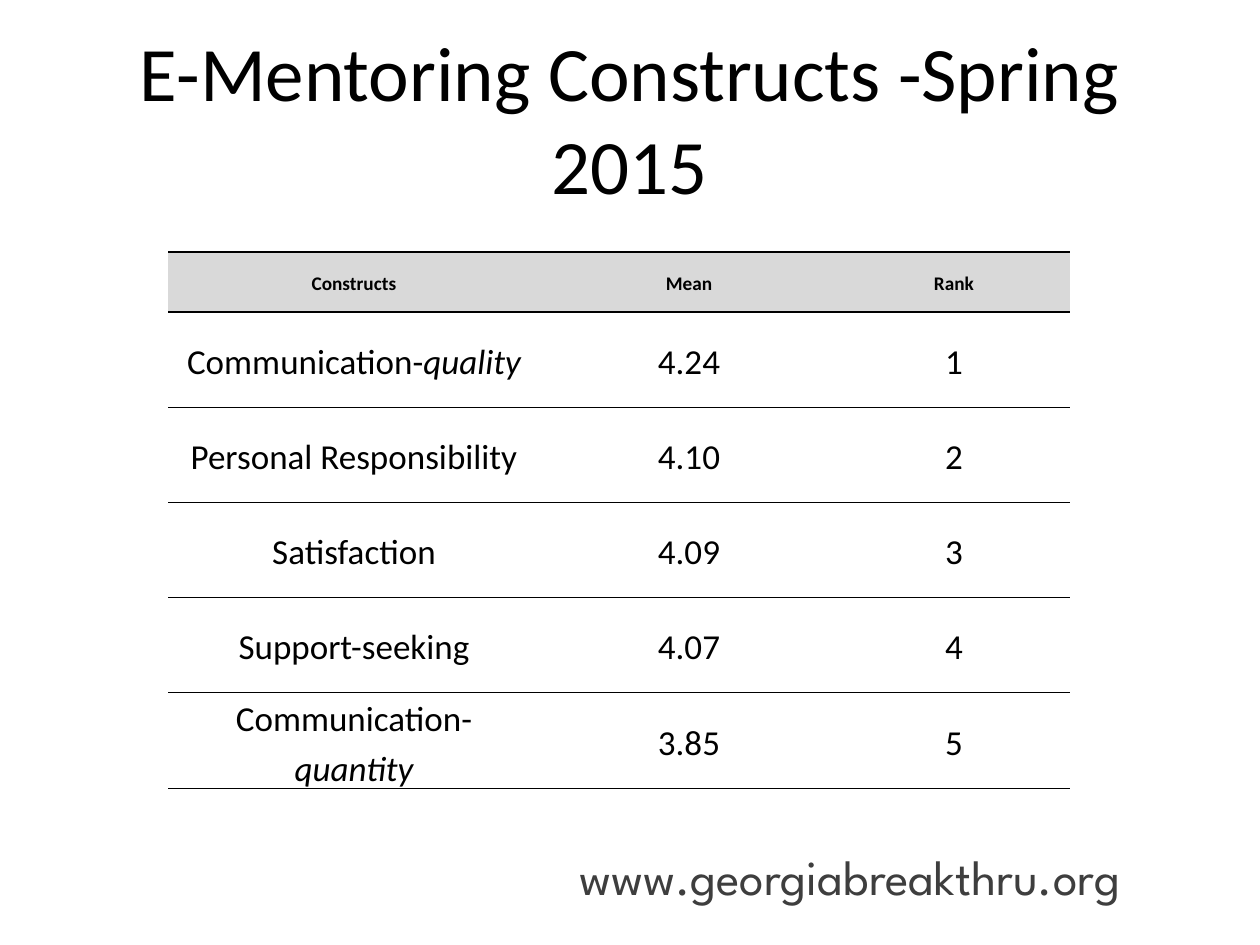
from pptx import Presentation
from pptx.dml.color import RGBColor
from pptx.enum.text import MSO_ANCHOR, PP_ALIGN
from pptx.oxml.ns import qn
from pptx.util import Emu, Pt
from lxml.etree import SubElement

SCALE = 914400 / 126  # EMU in one px
BLACK, GREY, DARK, WHITE = "000000", "D9D9D9", "3E3E3E", "FFFFFF"

COLS = [372, 298, 232]
HEAD = ["Constructs", "Mean", "Rank"]
# Plain part, italic part, mean
ROWS = [
    ("Communication-", "quality", "4.24"),
    ("Personal Responsibility", "", "4.10"),
    ("Satisfaction", "", "4.09"),
    ("Support-seeking", "", "4.07"),
    ("Communication-", "quantity", "3.85"),
]


def px(n):
    return Emu(round(n * SCALE))


def color(code):
    return RGBColor.from_string(code)


def write(para, text, size=20, font="Calibri", ink=BLACK, bold=False, italic=False):
    run = para.add_run()
    run.text = text
    run.font.size = Pt(size)
    run.font.name = font
    run.font.color.rgb = color(ink)
    run.font.bold = bold
    run.font.italic = italic


def add_text(slide, text, box, align=PP_ALIGN.LEFT, anchor=MSO_ANCHOR.TOP, **style):
    frame = slide.shapes.add_textbox(*map(px, box)).text_frame
    frame.word_wrap = True
    frame.vertical_anchor = anchor
    para = frame.paragraphs[0]
    para.alignment = align
    write(para, text, **style)


def add_edge(cell, side, width):
    """Draw one cell border; a width of 0 hides it."""
    line = SubElement(cell._tc.get_or_add_tcPr(), qn("a:ln" + side), w=str(Pt(width)))
    if width:
        fill = SubElement(line, qn("a:solidFill"))
        SubElement(fill, qn("a:srgbClr"), val=BLACK)
    else:
        SubElement(line, qn("a:noFill"))


def fill_cell(cell, parts, top, base, back, **style):
    cell.margin_left = cell.margin_right = px(9)
    cell.margin_top = cell.margin_bottom = 0
    cell.vertical_anchor = MSO_ANCHOR.MIDDLE
    for side, width in (("L", 0), ("R", 0), ("T", top), ("B", base)):
        add_edge(cell, side, width)
    cell.fill.solid()
    cell.fill.fore_color.rgb = color(back)
    para = cell.text_frame.paragraphs[0]
    para.alignment = PP_ALIGN.CENTER
    para.line_spacing = 1.15
    for i, text in enumerate(parts):
        if text:
            write(para, text, italic=i > 0, **style)


def add_grid(slide):
    last = len(ROWS)
    shape = slide.shapes.add_table(
        last + 1, len(COLS), px(168), px(252), px(sum(COLS)), px(60 + 95 * last))
    grid = shape.table
    grid.first_row = grid.horz_banding = False
    for col, width in zip(grid.columns, COLS):
        col.width = px(width)
    for i, row in enumerate(grid.rows):
        row.height = px(95 if i else 60)

    # Header row
    for c, text in enumerate(HEAD):
        fill_cell(grid.cell(0, c), [text], 1, 1, GREY, size=11, bold=True)

    # Body rows, ranked in order
    for r, (plain, slant, mean) in enumerate(ROWS, 1):
        top = 1 if r == 1 else 0.5
        base = 1 if r == last else 0.5
        for c, parts in enumerate([(plain, slant), (mean,), (str(r),)]):
            fill_cell(grid.cell(r, c), parts, top, base, WHITE)


def main():
    deck = Presentation()
    deck.slide_width, deck.slide_height = px(1260), px(945)
    slide = deck.slides.add_slide(deck.slide_layouts[6])

    # Title
    add_text(slide, "E-Mentoring Constructs -Spring 2015", (63, 38, 1134, 158),
             align=PP_ALIGN.CENTER, anchor=MSO_ANCHOR.MIDDLE, size=44)
    # Table of constructs
    add_grid(slide)
    # Web address
    add_text(slide, "www.georgiabreakthru.org", (567, 840, 672, 50),
             size=28, font="League Spartan", ink=DARK)
    deck.save("out.pptx")


if __name__ == "__main__":
    main()
